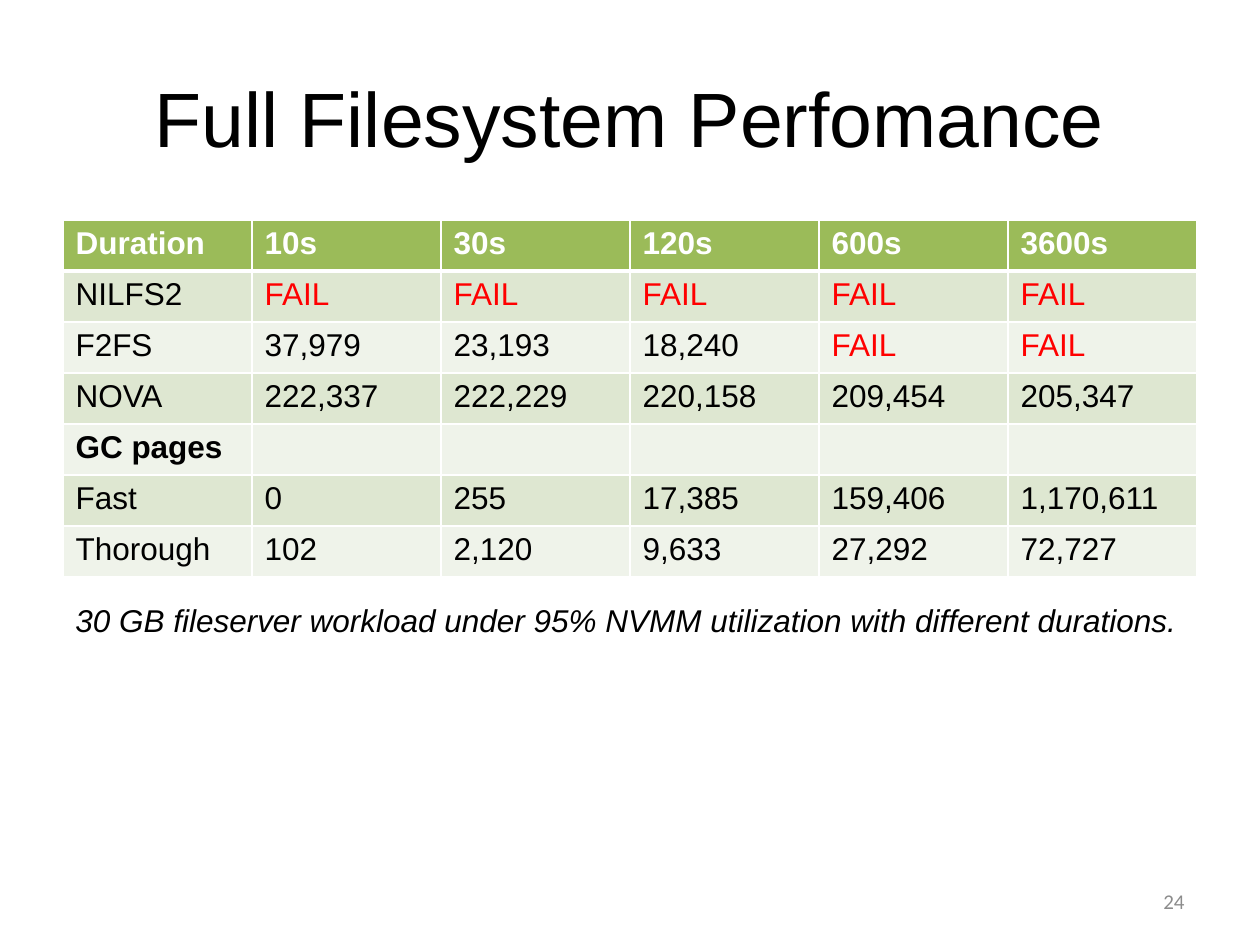
from lxml.etree import SubElement
from pptx import Presentation
from pptx.dml.color import RGBColor
from pptx.enum.text import MSO_ANCHOR, MSO_AUTO_SIZE, PP_ALIGN
from pptx.oxml.ns import qn
from pptx.util import Pt

PX = 914400 / 126
COLORS = {
    "text": "000000", "white": "FFFFFF", "fail": "FF0000", "number": "8C8C8C",
    "header": "9BBB59", "dark band": "DEE7D1", "light band": "EFF3EA",
}
ROWS = [
    ["Duration", "10s", "30s", "120s", "600s", "3600s"],
    ["NILFS2"] + ["FAIL"] * 5,
    ["F2FS", "37,979", "23,193", "18,240", "FAIL", "FAIL"],
    ["NOVA", "222,337", "222,229", "220,158", "209,454", "205,347"],
    ["GC pages"] + [""] * 5,
    ["Fast", "0", "255", "17,385", "159,406", "1,170,611"],
    ["Thorough", "102", "2,120", "9,633", "27,292", "72,727"],
]


def write(frame, text, size, color="text", font="Arial", bold=False, italic=False):
    """Put one line of formatted text in a frame and return its paragraph."""
    frame.text = text
    para = frame.paragraphs[0]
    for span in para.runs:
        span.font.name = font
        span.font.size = Pt(size)
        span.font.bold = bold
        span.font.italic = italic
        span.font.color.rgb = RGBColor.from_string(COLORS[color])
    return para


def place(left, top, width, height):
    return [round(length * PX) for length in (left, top, width, height)]


deck = Presentation()
deck.slide_width, deck.slide_height = round(1260 * PX), round(945 * PX)
page = deck.slides.add_slide(deck.slide_layouts[5])

# Title
title = page.shapes.title
title.left, title.top, title.width, title.height = place(63, 38, 1134, 157)
title.text_frame.vertical_anchor = MSO_ANCHOR.MIDDLE
para = write(title.text_frame, "Full Filesystem Perfomance", 44)
para.alignment = PP_ALIGN.CENTER

# Results table
table = page.shapes.add_table(
    len(ROWS), len(ROWS[0]), *place(63, 220, 1134, 51 * len(ROWS))).table
for column in table.columns:
    column.width = round(189 * PX)
for r, values in enumerate(ROWS):
    table.rows[r].height = round(51 * PX)
    band = "header" if r == 0 else "dark band" if r % 2 else "light band"
    for c, value in enumerate(values):
        cell = table.cell(r, c)
        color = "white" if r == 0 else "fail" if value == "FAIL" else "text"
        write(cell.text_frame, value, 18, color, bold=r == 0 or value == "GC pages")

        # Borders come before the fill in the cell properties
        properties = cell._tc.get_or_add_tcPr()
        for side in ("lnL", "lnR", "lnT", "lnB"):
            under_header = (r, side) in ((0, "lnB"), (1, "lnT"))
            line = SubElement(properties, qn(f"a:{side}"), w=str(Pt(3 if under_header else 1)))
            fill = SubElement(line, qn("a:solidFill"))
            SubElement(fill, qn("a:srgbClr"), val=COLORS["white"])
        cell.fill.solid()
        cell.fill.fore_color.rgb = RGBColor.from_string(COLORS[band])

# Caption
caption = page.shapes.add_textbox(*place(63, 595, 1144, 51)).text_frame
caption.word_wrap = False
caption.auto_size = MSO_AUTO_SIZE.SHAPE_TO_FIT_TEXT
write(caption, "30 GB fileserver workload under 95% NVMM utilization with different durations.",
      18, italic=True)

# Page number
number = page.shapes.add_textbox(*place(903, 876, 294, 50)).text_frame
number.word_wrap = True
number.vertical_anchor = MSO_ANCHOR.MIDDLE
para = write(number, "24", 12, "number", "Calibri")
para.alignment = PP_ALIGN.RIGHT

deck.save("out.pptx")
